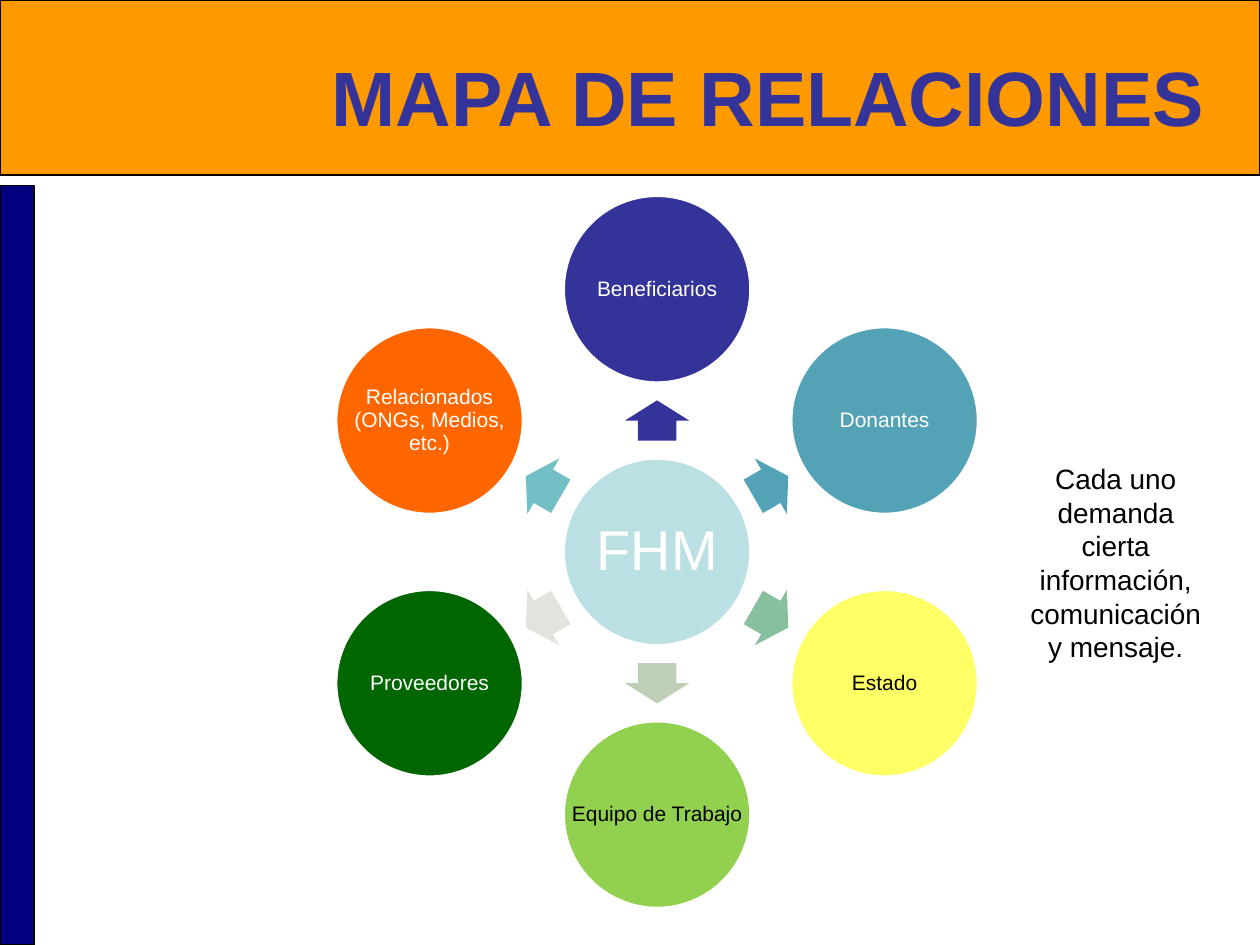
from math import cos, radians, sin

from pptx import Presentation
from pptx.dml.color import RGBColor
from pptx.enum.shapes import MSO_SHAPE
from pptx.enum.text import MSO_ANCHOR, PP_ALIGN
from pptx.util import Inches, Pt

COLORS = {
    "band": "FF9900", "stripe": "000080", "title": "333399",
    "hub": "BBE0E3", "white": "FFFFFF", "black": "000000",
}
PARTNERS = [
    ("Beneficiarios", "333399", "333399", "white"),
    ("Donantes", "54A2B6", "54A2B6", "white"),
    ("Estado", "FFFF66", "88BF9E", "black"),
    ("Equipo de Trabajo", "92D050", "BFCEB6", "black"),
    ("Proveedores", "006600", "E3E2DD", "white"),
    ("Relacionados (ONGs, Medios, etc.)", "FF6600", "72BFC5", "white"),
]


def add_box(slide, kind, box, fill=None, line=None, line_width=0.75):
    """Add a preset shape with optional fill and outline."""
    shape = slide.shapes.add_shape(kind, *[Inches(value) for value in box])
    shape.shadow.inherit = False
    if fill:
        shape.fill.solid()
        shape.fill.fore_color.rgb = RGBColor.from_string(fill)
    else:
        shape.fill.background()
    if line:
        shape.line.color.rgb = RGBColor.from_string(line)
        shape.line.width = Pt(line_width)
    else:
        shape.line.fill.background()
    return shape


def write(shape, text, size, color, bold=False):
    """Write one centred paragraph in the middle of a shape."""
    frame = shape.text_frame
    frame.word_wrap = True
    frame.vertical_anchor = MSO_ANCHOR.MIDDLE
    paragraph = frame.paragraphs[0]
    paragraph.alignment = PP_ALIGN.CENTER
    run = paragraph.add_run()
    run.text = text
    run.font.name = "Arial"
    run.font.size = Pt(size)
    run.font.bold = bold
    run.font.color.rgb = RGBColor.from_string(color)
    return paragraph


def add_text(slide, box, text, size, color, bold=False):
    """Add a text box holding one centred paragraph."""
    text_box = slide.shapes.add_textbox(*[Inches(value) for value in box])
    return text_box, write(text_box, text, size, color, bold)


def add_header(slide, left, top, width, height):
    """Add the title band with its heading."""
    add_box(slide, MSO_SHAPE.RECTANGLE, (left, top, width, height),
            COLORS["band"], COLORS["black"])
    add_text(slide, (left + 2.48, top + 0.21, width - 2.76, 1.1),
             "MAPA DE RELACIONES", 44, COLORS["title"], True)


def add_circle(slide, center_x, center_y, diameter, text, size, fill, color, inset):
    """Add a labelled circle around a centre point."""
    box = (center_x - diameter / 2, center_y - diameter / 2, diameter, diameter)
    add_box(slide, MSO_SHAPE.OVAL, box, fill, COLORS["white"], 2)
    text_box, paragraph = add_text(slide, box, text, size, color)
    paragraph.line_spacing = 0.9
    frame = text_box.text_frame
    frame.margin_left = frame.margin_right = Inches(inset)
    frame.margin_top = frame.margin_bottom = Inches(inset)


def add_arrow(slide, center_x, center_y, angle, fill):
    """Add a block arrow turned to an angle around its centre."""
    width, height = 0.32, 0.51
    arrow = add_box(slide, MSO_SHAPE.RIGHT_ARROW,
                    (center_x - width / 2, center_y - height / 2, width, height), fill)
    arrow.adjustments[0] = 0.6
    arrow.adjustments[1] = 0.5
    arrow.rotation = angle % 360


def add_relationship_map(slide, left, top, width, height):
    """Add the hub and the ring of partners that fill a box."""
    diameter = 1.49
    center_x, center_y = left + width / 2, top + height / 2
    ring = (height - diameter) / 2
    add_circle(slide, center_x, center_y, diameter, "FHM", 32,
               COLORS["hub"], COLORS["white"], 0.04)
    for index, (name, fill, arrow_fill, text_color) in enumerate(PARTNERS):
        angle = 360 / len(PARTNERS) * index - 90
        across, down = cos(radians(angle)), sin(radians(angle))
        add_arrow(slide, center_x + ring / 2 * across,
                  center_y + ring / 2 * down, angle, arrow_fill)
        add_circle(slide, center_x + ring * across, center_y + ring * down,
                   diameter, name, 12, fill, COLORS[text_color], 0.02)


def add_note(slide, left, top, width, height):
    """Add the remark beside the map."""
    note = add_box(slide, MSO_SHAPE.ROUNDED_RECTANGLE, (left, top, width, height))
    write(note, "Cada uno demanda cierta información, comunicación y mensaje.",
          16, COLORS["black"])


def main():
    """Build and save the slide."""
    presentation = Presentation()
    presentation.slide_width, presentation.slide_height = Inches(10), Inches(7.5)
    slide = presentation.slides.add_slide(presentation.slide_layouts[6])
    add_header(slide, 0, 0, 10, 1.39)
    add_box(slide, MSO_SHAPE.RECTANGLE, (0, 1.47, 0.27, 6.03),
            COLORS["stripe"], COLORS["black"])
    add_relationship_map(slide, 2.66, 1.55, 5.11, 5.66)
    add_note(slide, 7.91, 2.1, 1.89, 4.73)
    presentation.save("out.pptx")


if __name__ == "__main__":
    main()
